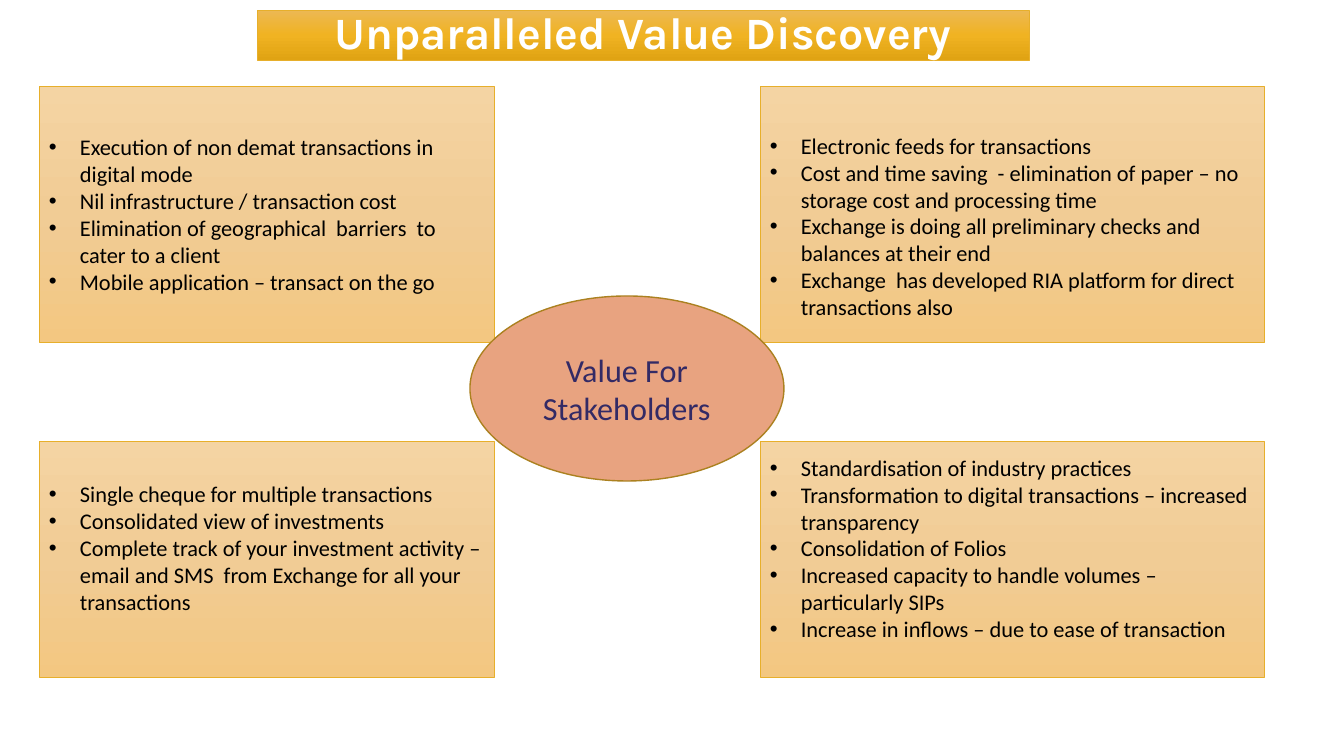
from copy import deepcopy
from dataclasses import dataclass

from lxml import etree
from pptx import Presentation, util as u
from pptx.dml.color import RGBColor
from pptx.enum import shapes, text
from pptx.oxml.ns import qn

PX = u.Inches(1) / 100.8


@dataclass(frozen=True)
class Theme:
    title_fill: tuple = ("ECB854", "F0B322", "E0A313")
    card_fill: tuple = ("F4D4A3", "F1CC95", "F3C781")
    hub_fill: str = "E8A380"
    gold: str = "E7AF2B"
    hub_line: str = "AB8120"
    white: str = "FFFFFF"
    black: str = "000000"
    indigo: str = "332A65"
    heading_font: str = "Karla"
    body_font: str = "Calibri"
    title_size: int = 32
    hub_size: int = 23
    body_size: int = 16


T = Theme()


def px(n):
    return u.Emu(round(n * PX))


def rgb(code):
    return RGBColor.from_string(code)


def fill_gradient(sp, colours):
    """Even top-to-bottom gradient through the given colours."""
    sp.fill.gradient()
    sp.fill.gradient_angle = 270
    stops = sp._element.spPr.find(".//" + qn("a:gsLst"))
    while len(stops) < len(colours):
        stops.append(deepcopy(stops[0]))
    for i, (stop, colour) in enumerate(zip(sp.fill.gradient_stops, colours)):
        stop.position = i / (len(colours) - 1)
        stop.color.rgb = rgb(colour)


def add_box(s, box, fill, line, width=0.5, kind=shapes.MSO_SHAPE.RECTANGLE):
    sp = s.shapes.add_shape(kind, *map(px, box))
    sp.shadow.inherit = False
    if isinstance(fill, str):
        sp.fill.solid()
        sp.fill.fore_color.rgb = rgb(fill)
    else:
        fill_gradient(sp, fill)
    sp.line.color.rgb = rgb(line)
    sp.line.width = u.Pt(width)
    tf = sp.text_frame
    tf.word_wrap = True
    tf.vertical_anchor = text.MSO_ANCHOR.MIDDLE
    return tf


def write(p, words, font=T.body_font, size=T.body_size, colour=T.black,
          bold=False, align=text.PP_ALIGN.CENTER, spacing=None, bullet=False):
    p.alignment = align
    if spacing:
        p.line_spacing = spacing
    if bullet:
        pPr = p._p.get_or_add_pPr()
        pPr.set("marL", str(px(31)))
        pPr.set("indent", str(-px(31)))
        etree.SubElement(pPr, qn("a:buFont")).set("typeface", "Arial")
        etree.SubElement(pPr, qn("a:buChar")).set("char", "•")
    r = p.add_run()
    r.text = words
    r.font.name = font
    r.font.size = u.Pt(size)
    r.font.bold = bold
    r.font.color.rgb = rgb(colour)


def add_title(s, box, words):
    tf = add_box(s, box, T.title_fill, T.gold)
    write(tf.paragraphs[0], words, font=T.heading_font, size=T.title_size,
          colour=T.white, bold=True, spacing=0.9)


def add_card(s, box, points, top=5, bottom=5):
    tf = add_box(s, box, T.card_fill, T.gold)
    tf.margin_top, tf.margin_bottom = px(top), px(bottom)
    for i, point in enumerate(points):
        p = tf.add_paragraph() if i else tf.paragraphs[0]
        write(p, point, align=text.PP_ALIGN.LEFT, bullet=True)


def add_hub(s, box, words):
    tf = add_box(s, box, T.hub_fill, T.hub_line, 1, shapes.MSO_SHAPE.OVAL)
    write(tf.paragraphs[0], words, size=T.hub_size, colour=T.indigo)


def build_slide(prs):
    s = prs.slides.add_slide(prs.slide_layouts[6])
    left, right = (39, 455), (760, 504)
    upper, lower = (86, 256), (441, 236)

    def cell(column, row):
        return column[0], row[0], column[1], row[1]

    # Title band
    add_title(s, (257, 10, 772, 50), "Unparalleled Value Discovery")

    # Upper cards
    add_card(s, cell(left, upper), [
        "Execution of non demat transactions in digital mode",
        "Nil infrastructure / transaction cost",
        "Elimination of geographical  barriers  to cater to a client",
        "Mobile application – transact on the go",
    ])
    add_card(s, cell(right, upper), [
        "Electronic feeds for transactions",
        "Cost and time saving  - elimination of paper – no storage cost "
        "and processing time",
        "Exchange is doing all preliminary checks and balances at their end",
        "Exchange  has developed RIA platform for direct transactions also",
    ], top=29)

    # Central hub
    add_hub(s, (470, 296, 314, 185), "Value For Stakeholders")

    # Lower cards
    add_card(s, cell(left, lower), [
        "Single cheque for multiple transactions",
        "Consolidated view of investments",
        "Complete track of your investment activity – email and SMS  from "
        "Exchange for all your transactions",
    ], bottom=28)
    add_card(s, cell(right, lower), [
        "Standardisation of industry practices",
        "Transformation to digital transactions – increased transparency",
        "Consolidation of Folios",
        "Increased capacity to handle volumes – particularly SIPs",
        "Increase in inflows – due to ease of transaction",
    ], bottom=27)


def main():
    prs = Presentation()
    prs.slide_width, prs.slide_height = px(1344), px(756)
    build_slide(prs)
    prs.save("out.pptx")


if __name__ == "__main__":
    main()
